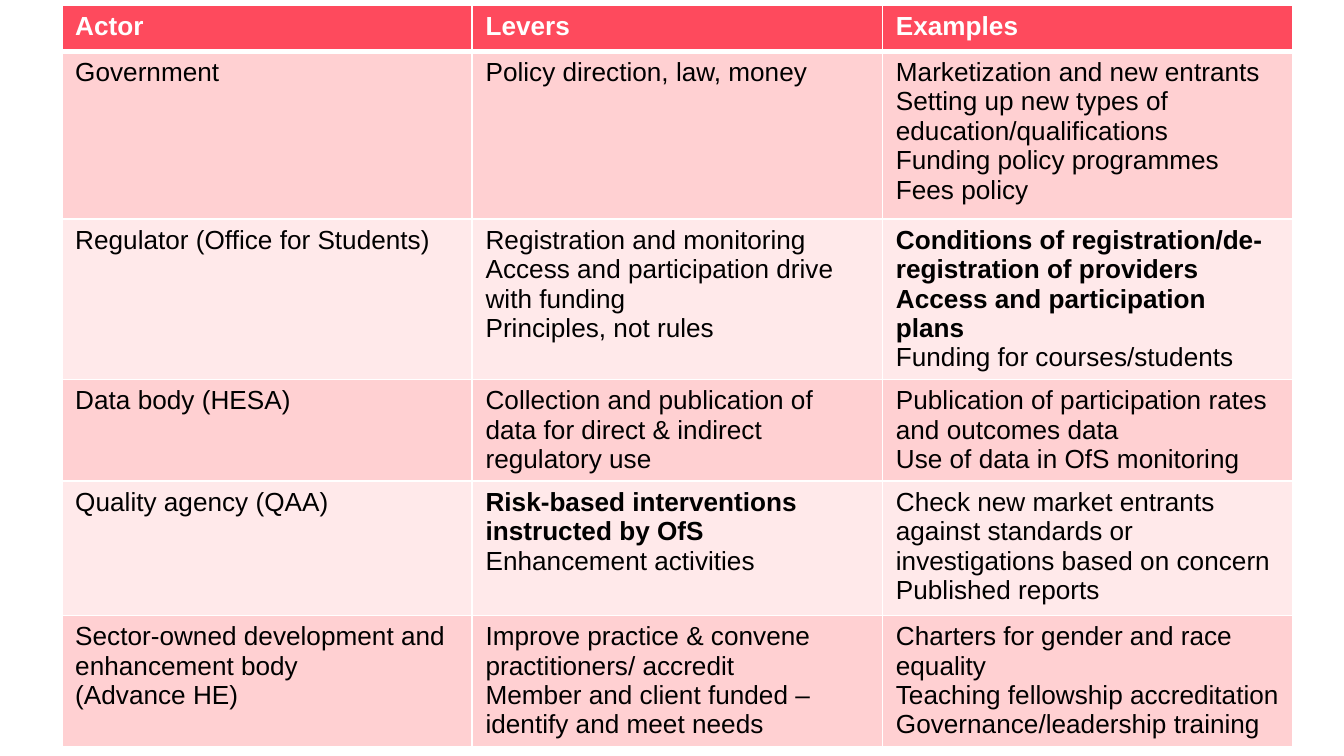
from lxml import etree
from pptx import Presentation
from pptx.dml.color import RGBColor
from pptx.oxml.ns import qn
from pptx.util import Inches, Pt

WHITE = RGBColor(0xFF, 0xFF, 0xFF)
BLACK = RGBColor(0x00, 0x00, 0x00)
RED = RGBColor(0xFE, 0x4A, 0x5D)
PINK = RGBColor(0xFF, 0xD0, 0xD2)
PALE = RGBColor(0xFF, 0xE9, 0xEA)

HEADERS = ["Actor", "Levers", "Examples"]
ACTORS = [
    (["Government"],
     ["Policy direction, law, money"],
     ["Marketization and new entrants",
      "Setting up new types of education/qualifications",
      "Funding policy programmes",
      "Fees policy"]),
    (["Regulator (Office for Students)"],
     ["Registration and monitoring",
      "Access and participation drive with funding",
      "Principles, not rules"],
     ["Conditions of registration/de-registration of providers",
      "Access and participation plans",
      "Funding for courses/students"]),
    (["Data body (HESA)"],
     ["Collection and publication of data for direct & indirect regulatory use"],
     ["Publication of participation rates and outcomes data",
      "Use of data in OfS monitoring"]),
    (["Quality agency (QAA)"],
     ["Risk-based interventions instructed by OfS",
      "Enhancement activities"],
     ["Check new market entrants against standards or investigations based on concern",
      "Published reports"]),
    (["Sector-owned development and enhancement body",
      "(Advance HE)"],
     ["Improve practice & convene practitioners/ accredit",
      "Member and client funded – identify and meet needs"],
     ["Charters for gender and race equality",
      "Teaching fellowship accreditation",
      "Governance/leadership training"]),
]
BOLD = {
    "Conditions of registration/de-registration of providers",
    "Access and participation plans",
    "Risk-based interventions instructed by OfS",
}
ROW_HEIGHTS = [0.34, 1.25, 1.19, 0.75, 1, 0.97]


def add_text(p, text, size=14, font="Arial", color=BLACK, bold=False):
    r = p.add_run()
    r.text = text
    r.font.size = Pt(size)
    r.font.name = font
    r.font.color.rgb = color
    r.font.bold = bold


def add_border(cell, side, width):
    tc_pr = cell._tc.get_or_add_tcPr()
    ln = etree.SubElement(tc_pr, qn(f"a:ln{side}"), w=str(Pt(width)))
    fill = etree.SubElement(ln, qn("a:solidFill"))
    etree.SubElement(fill, qn("a:srgbClr"), val=str(WHITE))


prs = Presentation()
prs.slide_width = Inches(10)
prs.slide_height = prs.slide_width * 9 // 16
s = prs.slides.add_slide(prs.slide_layouts[6])

rows = [[[header] for header in HEADERS], *ACTORS]
table = s.shapes.add_table(len(rows), len(HEADERS), Inches(0.46), Inches(0.04),
                           Inches(9.16), Inches(5.5)).table
for row, height in zip(table.rows, ROW_HEIGHTS):
    row.height = Inches(height)

for i, row in enumerate(rows):
    is_header = i == 0
    for j, lines in enumerate(row):
        cell = table.cell(i, j)
        for side in "LRTB":
            under_header = (i, side) in [(0, "B"), (1, "T")]
            add_border(cell, side, 3 if under_header else 1)
        cell.fill.solid()
        cell.fill.fore_color.rgb = RED if is_header else PINK if i % 2 else PALE
        tf = cell.text_frame
        for k, line in enumerate(lines):
            p = tf.add_paragraph() if k else tf.paragraphs[0]
            add_text(p, line, color=WHITE if is_header else BLACK,
                     bold=is_header or line in BOLD)

prs.save("out.pptx")
